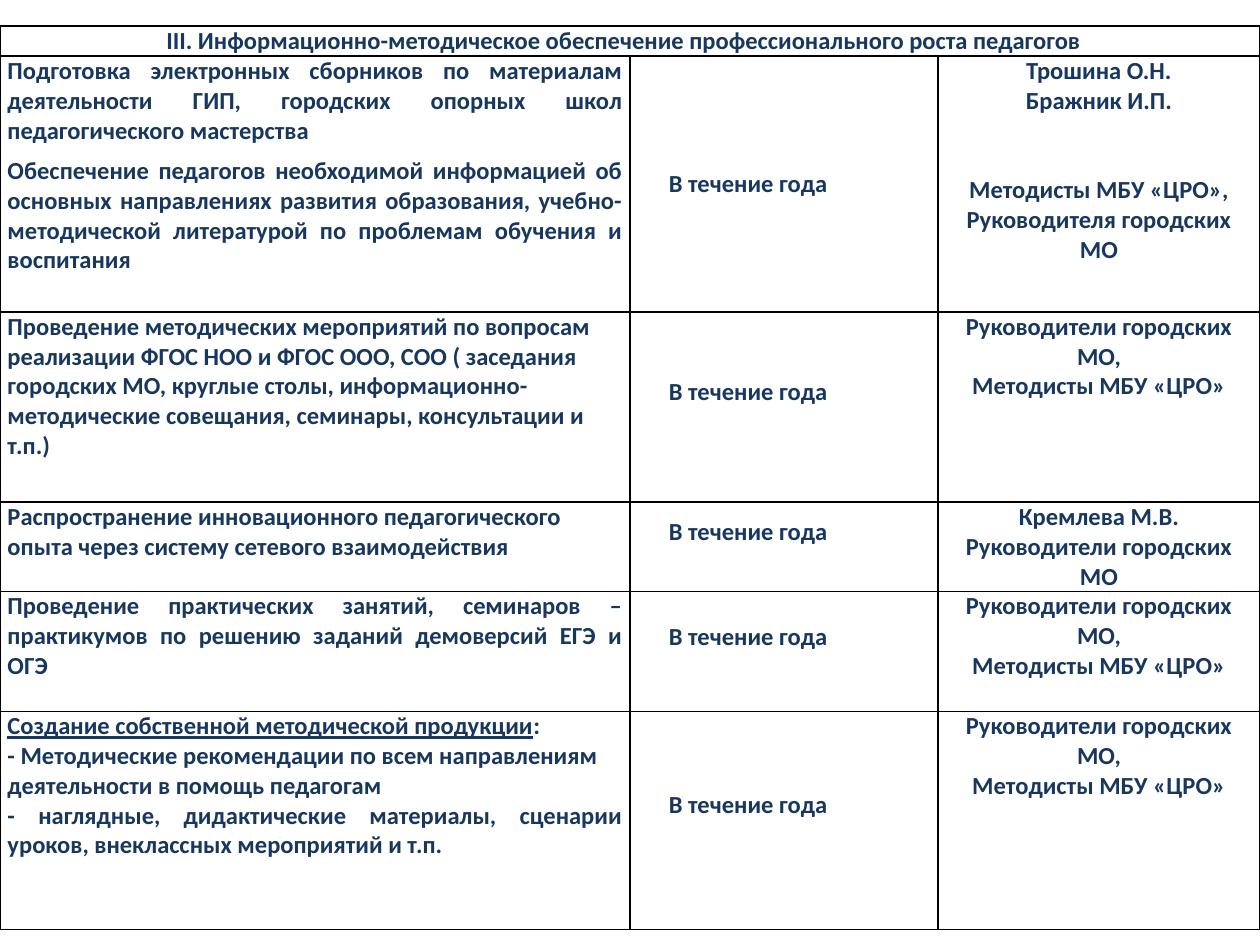
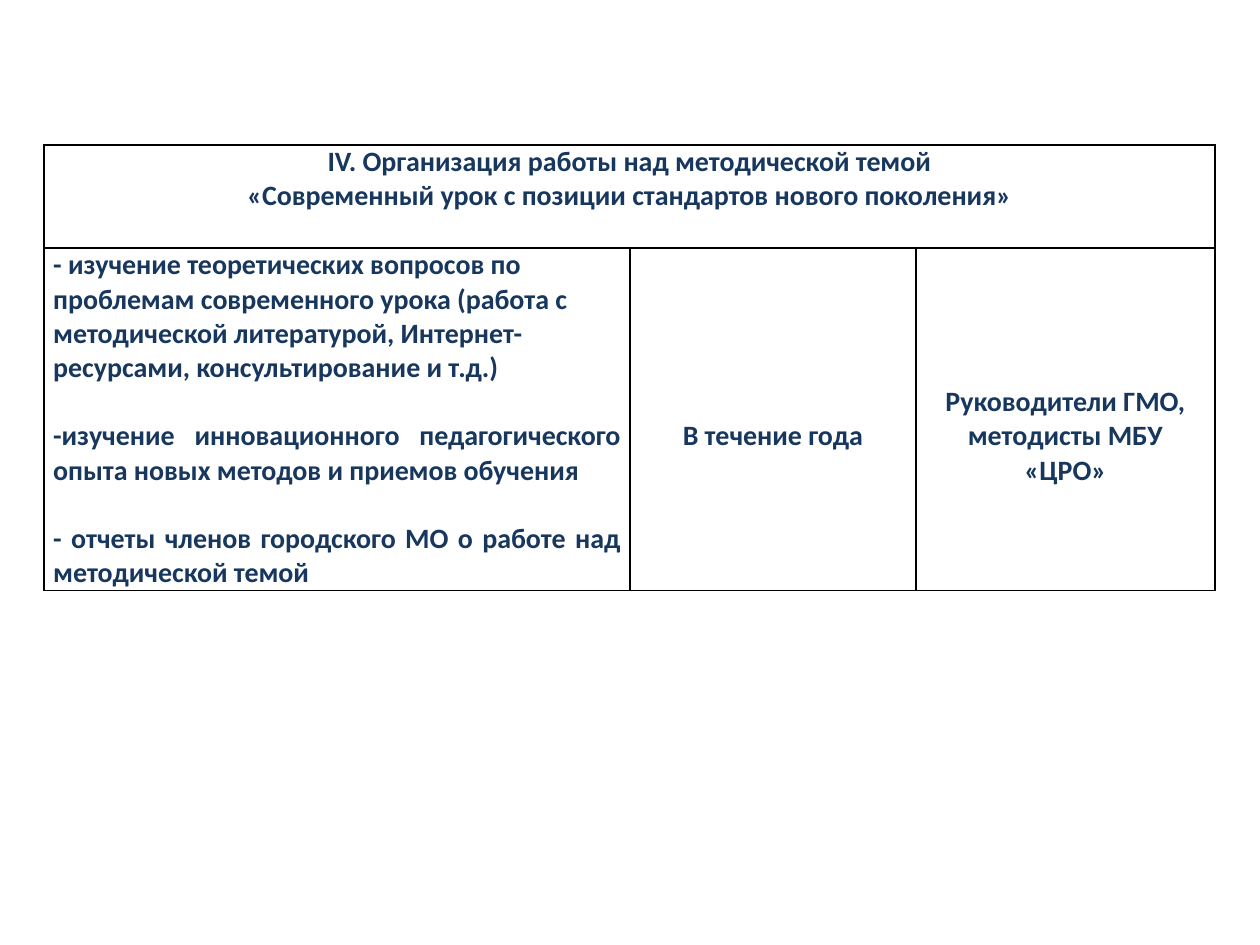
from dataclasses import dataclass

from lxml import etree
from pptx import Presentation
from pptx.dml.color import RGBColor
from pptx.enum.text import MSO_ANCHOR, PP_ALIGN
from pptx.oxml.ns import qn
from pptx.util import Pt

LEFT, CENTER, JUSTIFY = PP_ALIGN.LEFT, PP_ALIGN.CENTER, PP_ALIGN.JUSTIFY
TOP, MIDDLE = MSO_ANCHOR.TOP, MSO_ANCHOR.MIDDLE
COLORS = {"text": "17375E", "border": "000000"}
FONT = "Calibri"
BORDER_WIDTH = Pt(1)
BLANK_LAYOUT = 6
ALL_YEAR = "В течение года"


@dataclass
class Line:
    """A paragraph; underlined is an underlined beginning of it."""
    text: str
    align: PP_ALIGN = LEFT
    before: float = 0
    after: float = 0
    underlined: str = ""


@dataclass
class Entry:
    """The content of a cell; the paddings shift its text."""
    lines: list
    anchor: MSO_ANCHOR = TOP
    pad_right: float = 0
    pad_top: float = 0
    pad_bottom: float = 0


def centered(*texts, **placement):
    return Entry([Line(text, CENTER) for text in texts], **placement)


def all_year(pad_bottom=17):
    return centered(ALL_YEAR, anchor=MIDDLE, pad_right=41, pad_bottom=pad_bottom)


def heads_and_methodists():
    return centered("Руководители городских МО,", "Методисты МБУ «ЦРО»")


def set_borders(cell):
    properties = cell._tc.get_or_add_tcPr()
    for position, side in enumerate(("lnL", "lnR", "lnT", "lnB")):
        border = etree.Element(qn(f"a:{side}"), w=str(BORDER_WIDTH))
        fill = etree.SubElement(border, qn("a:solidFill"))
        etree.SubElement(fill, qn("a:srgbClr"), val=COLORS["border"])
        properties.insert(position, border)


def write_line(paragraph, line, size):
    paragraph.alignment = line.align
    paragraph.space_before = Pt(line.before)
    paragraph.space_after = Pt(line.after)
    font = paragraph.font
    font.name, font.size, font.bold = FONT, Pt(size), True
    font.color.rgb = RGBColor.from_string(COLORS["text"])
    if line.underlined:
        beginning = paragraph.add_run()
        beginning.text = line.underlined
        beginning.font.underline = True
    paragraph.add_run().text = line.text


def fill_cell(cell, entry, size, inset):
    cell.vertical_anchor = entry.anchor
    cell.margin_left = Pt(inset)
    cell.margin_right = Pt(inset + entry.pad_right)
    cell.margin_top = Pt(entry.pad_top)
    cell.margin_bottom = Pt(entry.pad_bottom)
    frame = cell.text_frame
    for number, line in enumerate(entry.lines):
        paragraph = frame.add_paragraph() if number else frame.paragraphs[0]
        write_line(paragraph, line, size)


def add_plan(prs, left, top, widths, heights, heading, activities, size, inset):
    """Add a slide with a plan table: a heading over activity, term, people."""
    slide = prs.slides.add_slide(prs.slide_layouts[BLANK_LAYOUT])
    plan = slide.shapes.add_table(
        len(heights), len(widths), Pt(left), Pt(top),
        Pt(sum(widths)), Pt(sum(heights))).table
    plan.first_row = plan.horz_banding = False
    for column, width in zip(plan.columns, widths):
        column.width = Pt(width)
    for row, height in zip(plan.rows, heights):
        row.height = Pt(height)
    for cell in plan.iter_cells():
        cell.fill.background()
        set_borders(cell)
    plan.cell(0, 0).merge(plan.cell(0, len(widths) - 1))
    fill_cell(plan.cell(0, 0), heading, size, inset)
    for row, entries in enumerate(activities, start=1):
        for column, entry in enumerate(entries):
            fill_cell(plan.cell(row, column), entry, size, inset)


def add_support_plan(prs):
    activities = [
        (Entry([
            Line("Подготовка электронных сборников по материалам деятельности "
                 "ГИП, городских опорных школ педагогического мастерства",
                 JUSTIFY, after=6),
            Line("Обеспечение педагогов необходимой информацией об основных "
                 "направлениях развития образования, учебно-методической "
                 "литературой по проблемам обучения и воспитания", JUSTIFY)]),
         all_year(pad_bottom=0),
         Entry([
             Line("Трошина О.Н.", CENTER),
             Line("Бражник И.П.", CENTER),
             Line("Методисты МБУ «ЦРО»,", CENTER, before=34),
             Line("Руководителя городских МО", CENTER)])),
        (Entry([
            Line("Проведение методических мероприятий по вопросам реализации "
                 "ФГОС НОО и ФГОС ООО, СОО ( заседания городских МО, круглые "
                 "столы, информационно-методические совещания, семинары, "
                 "консультации и т.п.)")]),
         all_year(),
         heads_and_methodists()),
        (Entry([
            Line("Распространение инновационного педагогического опыта через "
                 "систему сетевого взаимодействия")]),
         all_year(),
         centered("Кремлева М.В.", "Руководители городских МО")),
        (Entry([
            Line("Проведение практических занятий, семинаров – практикумов по "
                 "решению заданий демоверсий ЕГЭ и ОГЭ", JUSTIFY)]),
         all_year(),
         heads_and_methodists()),
        (Entry([
            Line(":", underlined="Создание собственной методической продукции"),
            Line("- Методические рекомендации по всем направлениям "
                 "деятельности в помощь педагогам"),
            Line("- наглядные, дидактические материалы, сценарии уроков, "
                 "внеклассных мероприятий и т.п.", JUSTIFY)]),
         all_year(),
         heads_and_methodists()),
    ]
    heading = centered("III. Информационно-методическое обеспечение "
                       "профессионального роста педагогов", pad_right=7)
    add_plan(prs, 0, 14.8, (360, 176, 184), (17.3, 146.2, 108.7, 51.1, 68.4, 124.6),
             heading, activities, size=14, inset=4.3)


def add_lesson_plan(prs):
    line_gap = 19.5
    activities = [
        (Entry([
            Line("- изучение теоретических вопросов по проблемам современного "
                 "урока (работа с методической литературой, Интернет- "
                 "ресурсами, консультирование и т.д.)", after=line_gap),
            Line("-изучение инновационного педагогического опыта новых методов "
                 "и приемов обучения", JUSTIFY, after=line_gap),
            Line("- отчеты членов городского МО о работе над методической "
                 "темой", JUSTIFY)]),
         centered(ALL_YEAR, anchor=MIDDLE, pad_top=line_gap),
         centered("Руководители ГМО, методисты МБУ «ЦРО»",
                  anchor=MIDDLE, pad_top=line_gap)),
    ]
    heading = centered("IV. Организация работы над методической темой",
                       "«Современный урок с позиции стандартов нового поколения»")
    add_plan(prs, 25.2, 82.8, (334.8, 163.4, 170.8), (59, 195.5),
             heading, activities, size=16, inset=5.2)


def main():
    prs = Presentation()
    prs.slide_width, prs.slide_height = Pt(720), Pt(540)
    add_support_plan(prs)
    add_lesson_plan(prs)
    prs.save("out.pptx")


if __name__ == "__main__":
    main()
